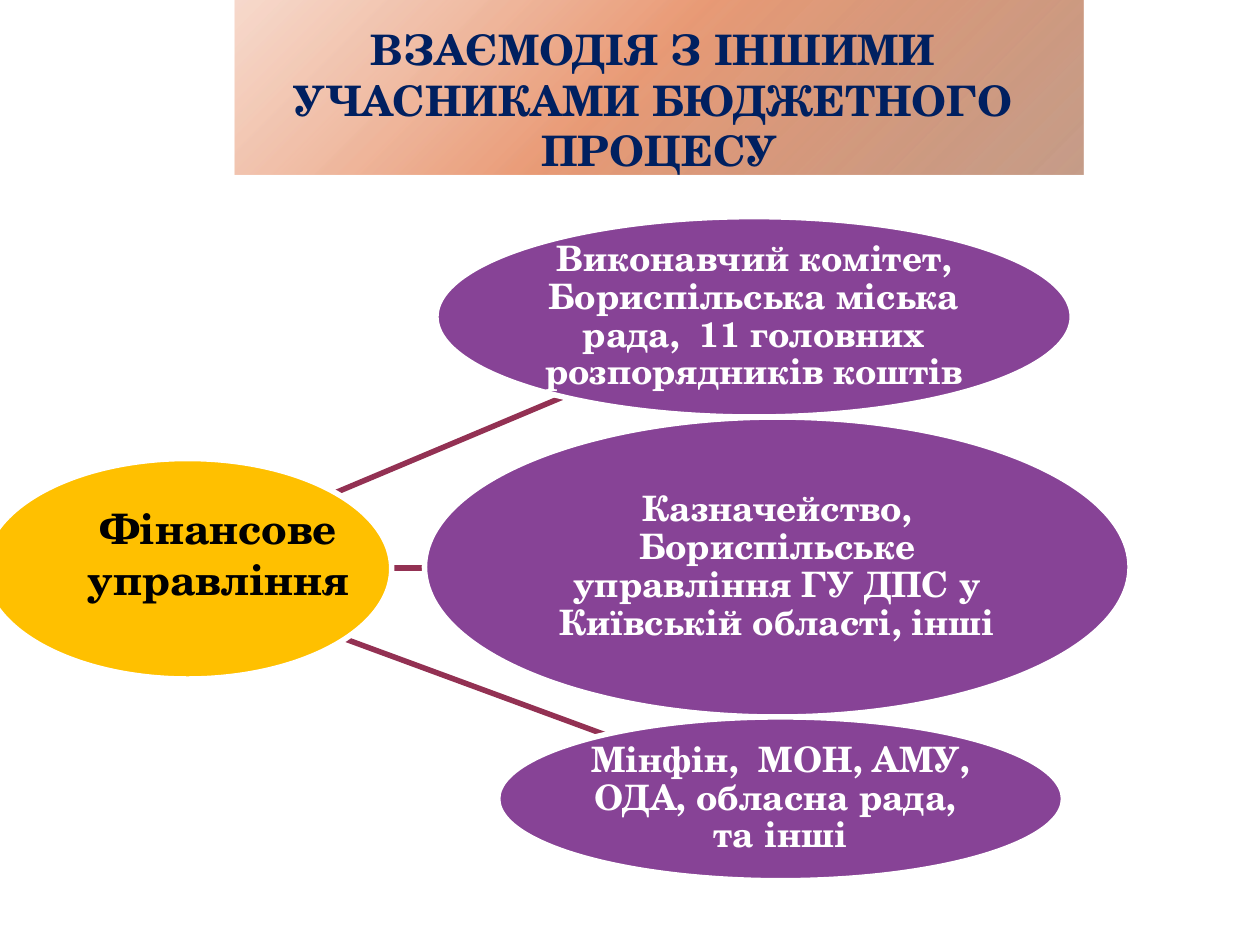
from dataclasses import dataclass

from lxml.etree import SubElement
from pptx import Presentation
from pptx.dml.color import RGBColor
from pptx.enum.shapes import MSO_CONNECTOR, MSO_SHAPE
from pptx.enum.text import MSO_ANCHOR, MSO_AUTO_SIZE, PP_ALIGN
from pptx.oxml.ns import qn
from pptx.util import Pt


@dataclass(frozen=True)
class Theme:
    """Colours, font and type sizes of the slide."""
    font: str = "TeX Gyre Schola"
    title: str = "002060"
    hub: str = "FFC000"
    hub_text: str = "000000"
    node: str = "874396"
    white: str = "FFFFFF"
    link: str = "933153"
    large: int = 24
    body: int = 20
    stroke: float = 3.15
    banner: tuple = ((0, "F2C4AF", 62), (46, "E07340", 71), (100, "8E3E17", 50))


THEME = Theme()

TITLE = "ВЗАЄМОДІЯ З ІНШИМИ \vУЧАСНИКАМИ БЮДЖЕТНОГО \vПРОЦЕСУ"
TITLE_BOX = (134, 0, 485.3, 100)
HUB_BOX = (-9.4, 262, 233.3, 126)
HUB_TEXT_BOX = (31.7, 283.7, 186.5, 64.8)
NODES = [
    ("Виконавчий комітет, Бориспільська міська рада,  11 головних розпорядників коштів",
     (249.1, 123.8, 363.6, 114.5)),
    ("Казначейство, Бориспільське управління ГУ ДПС у Київській області, інші",
     (242.6, 238.3, 403.2, 171.4)),
    ("Мінфін,  МОН, АМУ, ОДА, обласна рада,  та інші",
     (284.4, 409.7, 323.3, 93.6)),
]
LINKS = [
    (154, 297.4, 321.8, 226.8),
    (154, 324.7, 242.6, 324.7),
    (154, 349.2, 345.6, 419.8),
]


def pts(values):
    """Turn numbers into point lengths."""
    return [Pt(v) for v in values]


def set_attrs(obj, values):
    """Set each named value on an object."""
    for name, value in values.items():
        setattr(obj, name, value)


def write(sp, text, size, color, anchor, margins, spacing=1.0):
    """Write one centred bold paragraph into a shape."""
    tf = sp.text_frame
    sides = ("margin_left", "margin_top", "margin_right", "margin_bottom")
    set_attrs(tf, {"word_wrap": True, "auto_size": MSO_AUTO_SIZE.NONE,
                   "vertical_anchor": anchor, **dict(zip(sides, pts(margins)))})
    p = tf.paragraphs[0]
    p.text = text
    set_attrs(p, {"alignment": PP_ALIGN.CENTER, "line_spacing": spacing})
    for r in p.runs:
        set_attrs(r.font, {"name": THEME.font, "size": Pt(size), "bold": True})
        r.font.color.rgb = RGBColor.from_string(color)


def fill_gradient(sp, stops, angle):
    """Fill a shape with a translucent linear gradient."""
    grad = SubElement(sp._element.spPr, qn("a:gradFill"), rotWithShape="1")
    stop_list = SubElement(grad, qn("a:gsLst"))
    for position, color, opacity in stops:
        stop = SubElement(stop_list, qn("a:gs"), pos=str(position * 1000))
        rgb = SubElement(stop, qn("a:srgbClr"), val=color)
        SubElement(rgb, qn("a:alpha"), val=str(opacity * 1000))
    SubElement(grad, qn("a:lin"), ang=str(angle * 60000), scaled="0")


def add_title(s, box):
    """Place the title on its gradient banner."""
    sp = s.shapes.title
    set_attrs(sp, dict(zip(("left", "top", "width", "height"), pts(box))))
    fill_gradient(sp, THEME.banner, 45)
    write(sp, TITLE, THEME.large, THEME.title, MSO_ANCHOR.BOTTOM, (3.6, 0, 3.6, 0))


def add_link(s, ends):
    """Draw one line from the hub to a node."""
    c = s.shapes.add_connector(MSO_CONNECTOR.STRAIGHT, *pts(ends))
    c.line.width = Pt(THEME.stroke)
    c.line.color.rgb = RGBColor.from_string(THEME.link)
    SubElement(c._element.spPr, qn("a:effectLst"))


def add_ellipse(s, box, color):
    """Draw a filled ellipse with a white outline."""
    sp = s.shapes.add_shape(MSO_SHAPE.OVAL, *pts(box))
    sp.shadow.inherit = False
    sp.fill.solid()
    sp.fill.fore_color.rgb = RGBColor.from_string(color)
    sp.line.width = Pt(THEME.stroke)
    sp.line.color.rgb = RGBColor.from_string(THEME.white)
    return sp


def add_hub(s, box, text_box):
    """Place the central ellipse and its label."""
    add_ellipse(s, box, THEME.hub)
    label = s.shapes.add_textbox(*pts(text_box))
    write(label, "Фінансове управління", THEME.large, THEME.hub_text,
          MSO_ANCHOR.TOP, (7.2, 3.6, 7.2, 3.6))


def add_node(s, text, box):
    """Place one participant ellipse with its text."""
    sp = add_ellipse(s, box, THEME.node)
    write(sp, text, THEME.body, THEME.white, MSO_ANCHOR.MIDDLE, (0.7,) * 4, 0.9)


def main():
    """Build and save the slide."""
    prs = Presentation()
    set_attrs(prs, {"slide_width": Pt(720), "slide_height": Pt(540)})
    s = prs.slides.add_slide(prs.slide_layouts[5])
    add_title(s, TITLE_BOX)
    for ends in LINKS:
        add_link(s, ends)
    add_hub(s, HUB_BOX, HUB_TEXT_BOX)
    for text, box in NODES:
        add_node(s, text, box)
    prs.save("out.pptx")


if __name__ == "__main__":
    main()
